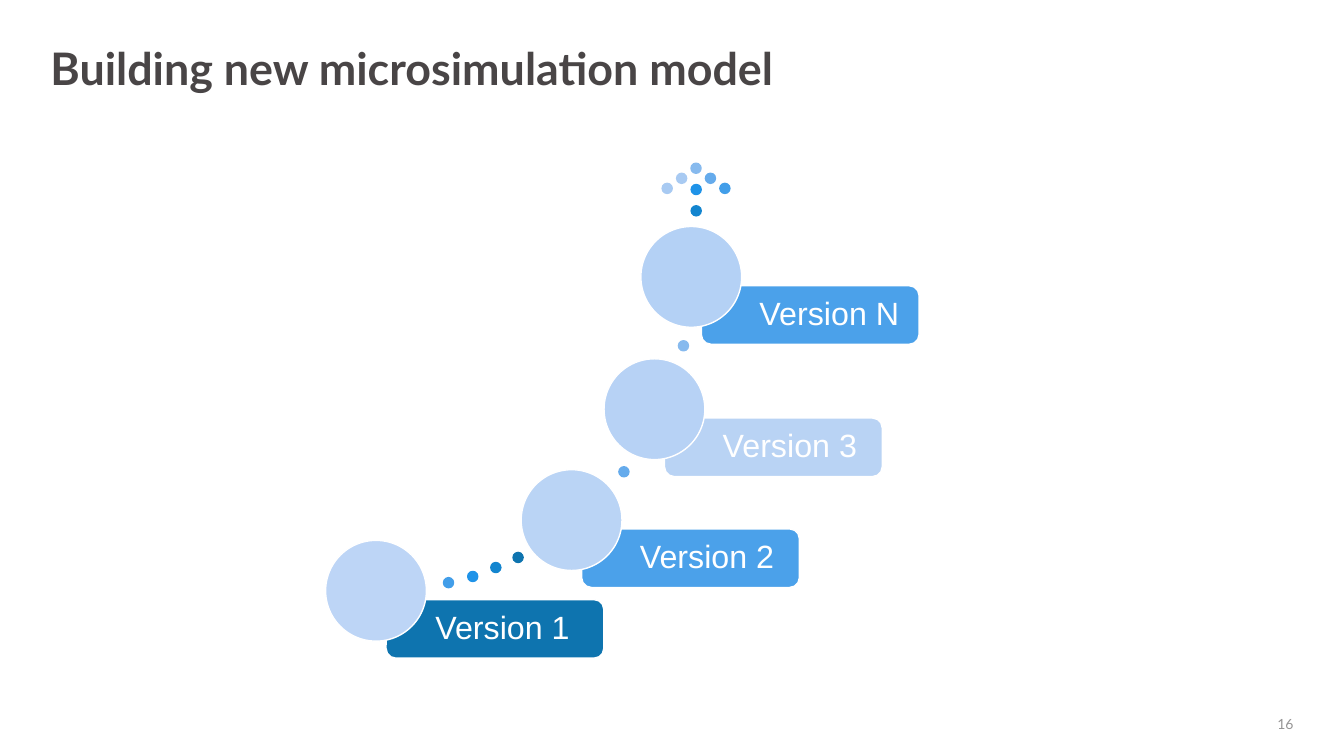
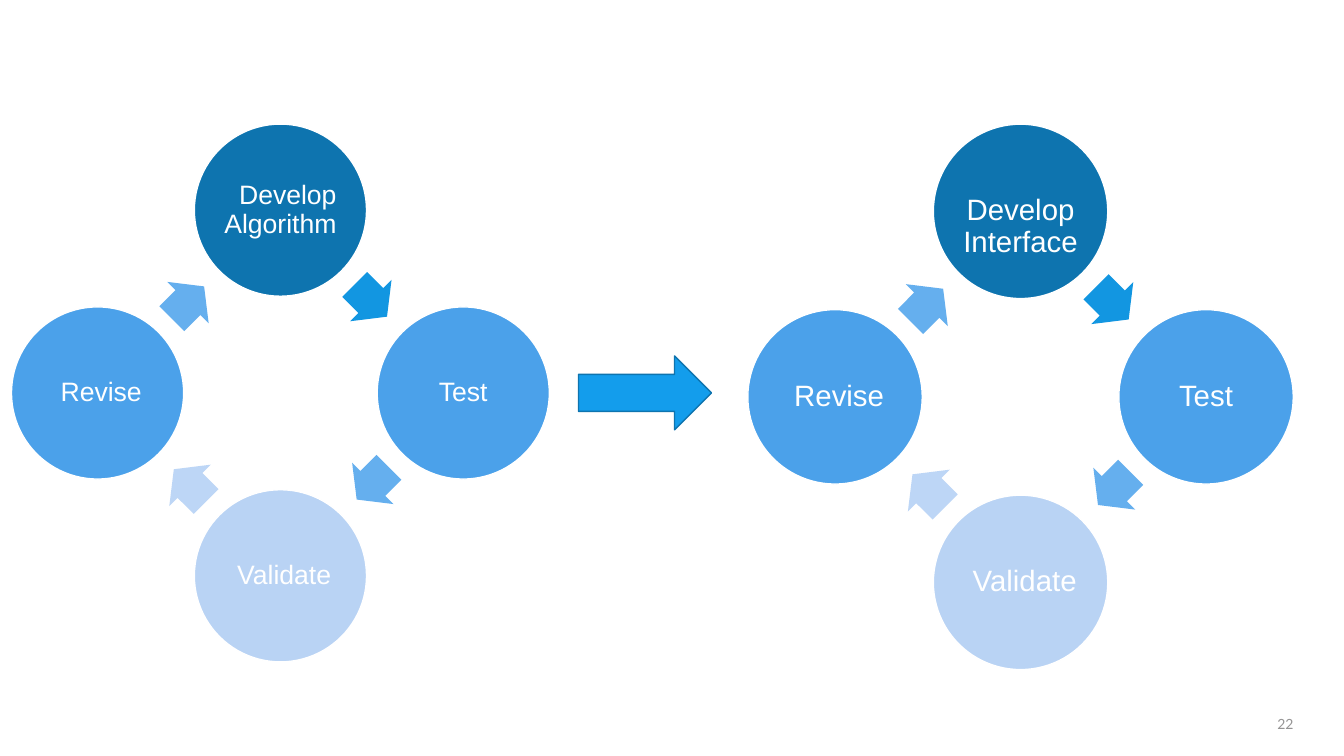
from math import cos, radians, sin, sqrt

from pptx import Presentation
from pptx.dml.color import RGBColor
from pptx.enum.shapes import MSO_SHAPE
from pptx.enum.text import MSO_ANCHOR, PP_ALIGN
from pptx.util import Pt

COLORS = {
    "white": "FFFFFF", "title": "494546", "number": "959494",
    "navy": "0E74AF", "blue": "1385CF", "azure": "1F93E8", "sky": "429EE9",
    "soft": "65ABEC", "pale": "87BAEE", "mist": "A8CAF2",
    "middle": "4BA1EA", "light": "B9D3F4",
    "bubble 1": "BDD5F6", "bubble 2": "BAD4F5", "bubble 3": "B7D2F5", "bubble N": "B4D1F5",
    "arrow strong": "1296E1", "arrow middle": "65AFEE", "arrow light": "BDD6F6",
    "arrow main": "139DEC",
}
SPACE_WIDTH = 0.278


class SlideBuilder:
    heading_font = "Lato"
    label_font = "Arial"

    def __init__(self):
        self.deck = Presentation()
        self.deck.slide_width, self.deck.slide_height = Pt(960), Pt(540)
        self.page = None

    def color(self, name):
        return RGBColor.from_string(COLORS[name])

    def new_page(self, number, title=None):
        layout = self.deck.slide_layouts[5 if title else 6]
        self.page = self.deck.slides.add_slide(layout)
        if title:
            self.title(title)
        box = self.page.shapes.add_textbox(Pt(708), Pt(509), Pt(216), Pt(16.5))
        self.set_text(box, str(number), self.heading_font, 10, "number", PP_ALIGN.RIGHT)

    def title(self, text):
        box = self.page.shapes.title
        box.left, box.top, box.width, box.height = Pt(36), Pt(29.5), Pt(888), Pt(91.4)
        self.set_text(box, text, self.heading_font, 32, "title", PP_ALIGN.LEFT,
                      (0, 3.6, 0, 3.6), MSO_ANCHOR.TOP, 0.9, True)

    def set_text(self, box, text, font, size, color, align, insets=(0, 0, 0, 0),
                 anchor=MSO_ANCHOR.MIDDLE, spacing=1, bold=False, indent=0):
        frame = box.text_frame
        frame.word_wrap = True
        frame.vertical_anchor = anchor
        frame.margin_left, frame.margin_top, frame.margin_right, frame.margin_bottom = map(Pt, insets)
        frame.text = text
        para = frame.paragraphs[0]
        para.alignment, para.line_spacing = align, spacing
        if indent:
            properties = para._p.get_or_add_pPr()
            properties.set("marL", "0")
            properties.set("indent", str(int(Pt(indent))))
        for span in para.runs:
            span.font.name, span.font.size, span.font.bold = font, Pt(size), bold
            span.font.color.rgb = self.color(color)

    def shape(self, kind, left, top, width, height, fill, line=None):
        shape = self.page.shapes.add_shape(kind, Pt(left), Pt(top), Pt(width), Pt(height))
        shape.shadow.inherit = False
        shape.fill.solid()
        shape.fill.fore_color.rgb = self.color(fill)
        if line:
            shape.line.color.rgb = self.color(line)
            shape.line.width = Pt(1)
        else:
            shape.line.fill.background()
        return shape

    def dot(self, left, top, color):
        self.shape(MSO_SHAPE.OVAL, left, top, 7.2, 7.2, color, color)

    def version(self, name, left, top, fill, bubble, gap):
        bar = self.shape(MSO_SHAPE.ROUNDED_RECTANGLE, left + 43.2, top + 42.3, 155.5, 41.8, fill, "white")
        self.set_text(bar, name, self.label_font, 23, "white", PP_ALIGN.LEFT,
                      (33.1 + gap, 7.2, 7.2, 7.2), spacing=0.9)
        self.shape(MSO_SHAPE.OVAL, left, top, 72, 72, bubble, "white")

    def cycle(self, center_x, center_y, radius, diameter, font_size, first_step, first_indent, first_drop):
        space = SPACE_WIDTH * font_size
        steps = [
            (first_step, "navy", "arrow strong", first_indent * space, first_drop),
            ("Test", "middle", "arrow middle", 0, 0),
            ("Validate", "light", "arrow light", space, 0),
            ("Revise", "middle", "arrow middle", space, 0),
        ]
        arrow_width, arrow_height = diameter * 0.265, diameter * 0.34
        for index, (name, fill, arrow_fill, indent, drop) in enumerate(steps):
            angle = radians(90 * index - 90)
            circle = self.shape(MSO_SHAPE.OVAL, center_x + radius * cos(angle) - diameter / 2,
                                center_y + radius * sin(angle) - diameter / 2,
                                diameter, diameter, fill, "white")
            self.set_text(circle, name, self.label_font, font_size, "white", PP_ALIGN.CENTER,
                          (2, 2 + drop, 2, 2), spacing=0.9, indent=indent)
            rotation = 45 + 90 * index
            outward, forward = radians(rotation - 90), radians(rotation)
            arrow_x = center_x + radius / sqrt(2) * cos(outward) - cos(forward)
            arrow_y = center_y + radius / sqrt(2) * sin(outward) - sin(forward)
            arrow = self.shape(MSO_SHAPE.RIGHT_ARROW, arrow_x - arrow_width / 2,
                               arrow_y - arrow_height / 2, arrow_width, arrow_height, arrow_fill)
            arrow.adjustments[0], arrow.adjustments[1] = 0.6, 0.5
            arrow.rotation = rotation


def build_versions(builder):
    builder.new_page(16, "Building new microsimulation model")
    trail = [
        (366.5, 394.6, "navy"), (350.6, 401.8, "blue"), (334.1, 408.2, "azure"),
        (316.8, 412.6, "sky"), (442.1, 333.4, "soft"), (484.6, 243.4, "pale"),
    ]
    for left, top, color in trail:
        builder.dot(left, top, color)
    for index, color in enumerate(["mist", "mist", "pale", "soft", "sky"]):
        builder.dot(473 + 10.3 * index, 116.6 + 7.2 * abs(index - 2), color)
    for index, color in enumerate(["azure", "blue"], 1):
        builder.dot(493.7, 116.6 + 15.2 * index, color)
    gap = SPACE_WIDTH * 23
    versions = [
        ("1", 232.6, 386, "navy", 0), ("2", 372.3, 335.5, "middle", gap),
        ("3", 431.5, 256.3, "light", gap), ("N", 457.8, 161.8, "middle", gap),
    ]
    for name, left, top, fill, indent in versions:
        builder.version(f"Version {name}", left, top, fill, f"bubble {name}", indent)


def build_cycles(builder):
    builder.new_page(22)
    builder.cycle(729, 283.5, 132.5, 124.6, 21, "Develop Interface", 0, 22)
    builder.cycle(200.3, 280.7, 130.6, 123, 19, "Develop Algorithm", 2, 0)
    builder.shape(MSO_SHAPE.RIGHT_ARROW, 413.2, 254.2, 95, 52.8, "arrow main", "navy")


def main():
    builder = SlideBuilder()
    build_versions(builder)
    build_cycles(builder)
    builder.deck.save("out.pptx")


if __name__ == "__main__":
    main()
